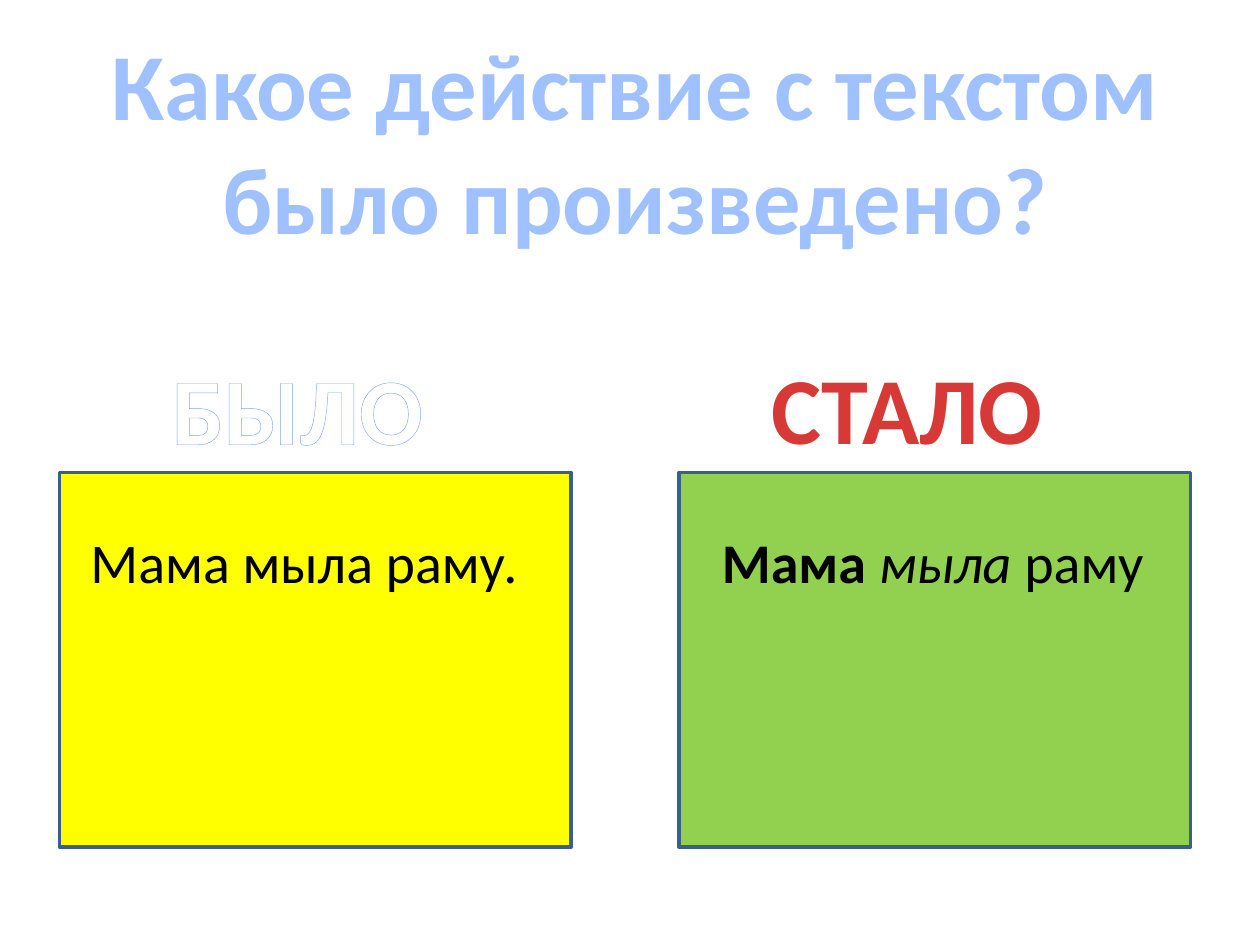
from dataclasses import dataclass

from lxml.etree import SubElement
from pptx import Presentation
from pptx.dml.color import RGBColor
from pptx.enum.shapes import MSO_SHAPE
from pptx.enum.text import MSO_ANCHOR, MSO_AUTO_SIZE, PP_ALIGN
from pptx.oxml import parse_xml
from pptx.oxml.ns import nsdecls, qn
from pptx.util import Pt

FONT = "Calibri"
COLORS = {
    "yellow": "FFFF00", "green": "92D050", "border": "3A5F8C",
    "text": "000000", "white": "FFFFFF", "title_line": "467AB8",
    "before_line": "7EA6EA", "after_line": "D73A36",
    "pale": "BFD3F9", "sky": "A0C1FF", "navy": "003D85",
}
TITLE_STOPS = [(0, "pale"), (9, "sky"), (50, "navy"), (79, "sky"), (100, "pale")]


@dataclass
class Piece:
    text: str
    bold: bool = False
    italic: bool = False


@dataclass
class Panel:
    left: float
    fill: str
    label: str
    label_left: float
    label_width: float
    label_fill: str | None  # None leaves the letters unfilled
    label_line: str
    label_line_width: float
    text_left: float
    pieces: list[Piece]


PANELS = [
    Panel(34, "yellow", "БЫЛО", 90, 160, "white", "before_line", 2.48, 44.6,
          [Piece("Мама мыла раму.")]),
    Panel(388, "green", "СТАЛО", 432.7, 171.4, None, "after_line", 1.42, 405.4,
          [Piece("Мама ", bold=True), Piece("мыла", italic=True), Piece(" раму")]),
]


def rgb(name: str) -> RGBColor:
    return RGBColor.from_string(COLORS[name])


def outline(r, color: str, width: float) -> None:
    """Draw a line around the letters of a run."""
    ln = parse_xml(f'<a:ln {nsdecls("a")} w="{int(Pt(width))}"><a:solidFill>'
                   f'<a:srgbClr val="{COLORS[color]}"/></a:solidFill></a:ln>')
    r.font._element.insert(0, ln)


def gradient(r) -> None:
    """Fill the letters of a run with the vertical title gradient."""
    r.font.fill.gradient()
    r.font.fill.gradient_angle = 270
    stops = r.font._element.find(".//" + qn("a:gsLst"))
    for old in list(stops):
        stops.remove(old)
    for pos, color in TITLE_STOPS:
        gs = SubElement(stops, qn("a:gs"), pos=str(pos * 1000))
        SubElement(gs, qn("a:srgbClr"), val=COLORS[color])


def place(sp, left: float, top: float, width: float, height: float) -> None:
    sp.left, sp.top, sp.width, sp.height = map(Pt, (left, top, width, height))


def set_text(sp, size: float, wrap: bool, align: PP_ALIGN, bold: bool | None = None):
    """Prepare a text shape and return its first paragraph."""
    tf = sp.text_frame
    tf.word_wrap = wrap
    tf.auto_size = MSO_AUTO_SIZE.SHAPE_TO_FIT_TEXT
    tf.vertical_anchor = MSO_ANCHOR.TOP
    p = tf.paragraphs[0]
    p.alignment = align
    p.font.name, p.font.size, p.font.bold = FONT, Pt(size), bold
    return p


def add_title(s, text: str) -> None:
    sp = s.shapes.title
    place(sp, 34, 11.5, 658, 138)
    r = set_text(sp, 54, True, PP_ALIGN.CENTER, True).add_run()
    r.text = text
    gradient(r)
    outline(r, "title_line", 0.83)


def add_panel(s, panel: Panel) -> None:
    # Coloured card
    sp = s.shapes.add_shape(MSO_SHAPE.RECTANGLE, Pt(panel.left), Pt(270), Pt(292.4), Pt(214))
    sp.shadow.inherit = False
    sp.fill.solid()
    sp.fill.fore_color.rgb = rgb(panel.fill)
    sp.line.color.rgb = rgb("border")
    sp.line.width = Pt(2)

    # Outlined label above the card
    sp = s.shapes.add_textbox(Pt(panel.label_left), Pt(196.6), Pt(panel.label_width), Pt(72.7))
    r = set_text(sp, 54, False, PP_ALIGN.CENTER, True).add_run()
    r.text = panel.label
    if panel.label_fill:
        r.font.fill.solid()
        r.font.fill.fore_color.rgb = rgb(panel.label_fill)
    else:
        r.font.fill.background()
    outline(r, panel.label_line, panel.label_line_width)

    # Sample sentence
    sp = s.shapes.add_textbox(Pt(panel.text_left), Pt(298), Pt(270), Pt(46))
    p = set_text(sp, 32, True, PP_ALIGN.LEFT)
    p.font.color.rgb = rgb("text")
    for piece in panel.pieces:
        r = p.add_run()
        r.text = piece.text
        r.font.bold, r.font.italic = piece.bold, piece.italic


def main() -> None:
    prs = Presentation()
    prs.slide_width, prs.slide_height = Pt(720), Pt(540)
    s = prs.slides.add_slide(prs.slide_layouts[5])
    add_title(s, "Какое действие с текстом было произведено?")
    for panel in PANELS:
        add_panel(s, panel)
    prs.save("out.pptx")


if __name__ == "__main__":
    main()
